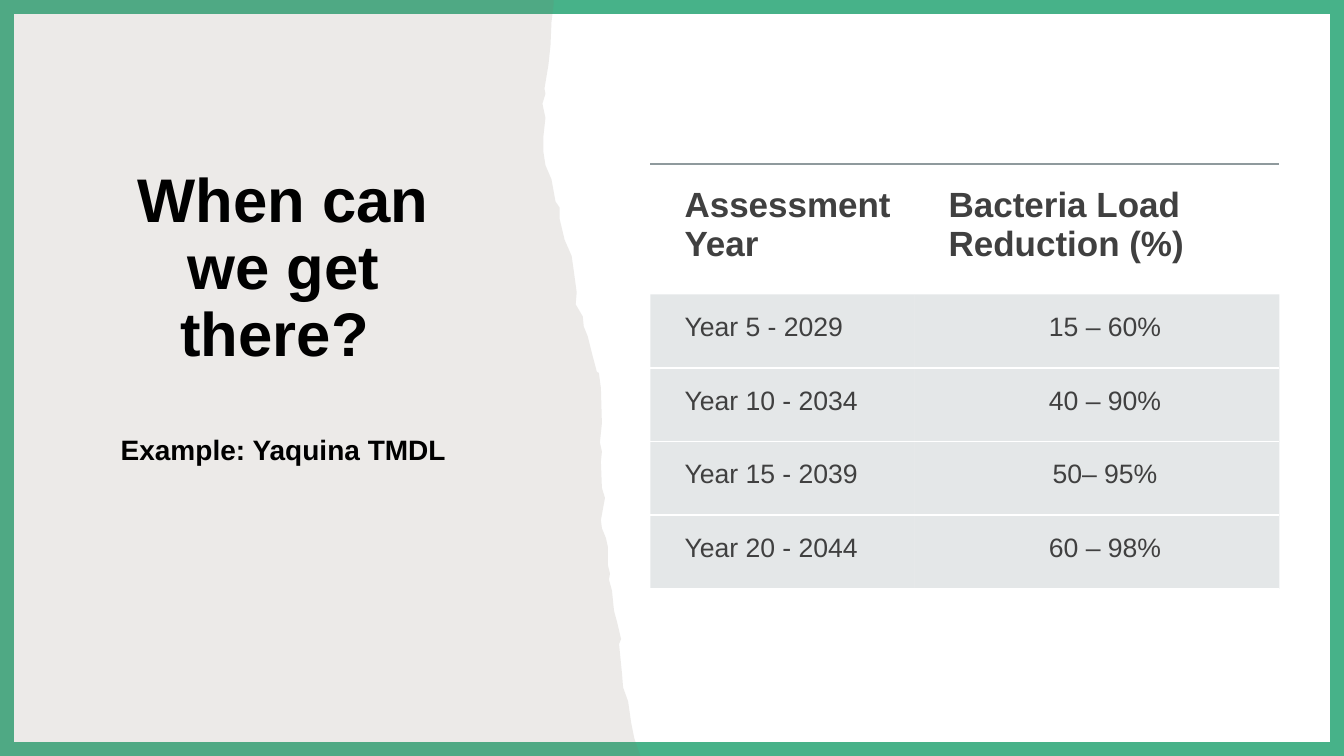
from lxml import etree
from pptx import Presentation
from pptx.dml.color import RGBColor
from pptx.enum.shapes import MSO_SHAPE
from pptx.enum.text import MSO_ANCHOR, PP_ALIGN
from pptx.oxml.ns import qn
from pptx.util import Inches, Pt

RECT = MSO_SHAPE.RECTANGLE
CENTER, LEFT = PP_ALIGN.CENTER, PP_ALIGN.LEFT
BOTTOM = MSO_ANCHOR.BOTTOM

# Content
TITLE = "When can we get there? "
SUBTITLE = "Example: Yaquina TMDL"
HEADER = ("Assessment Year", "Bacteria Load Reduction (%)")
FIRST_YEAR, YEAR_STEP = 2024, 5
REDUCTIONS = ("15 – 60%", "40 – 90%", "50– 95%", "60 – 98%")

# Torn edge of the left panel: (x, y) in inches, top to bottom
TORN_EDGE = [
    (5.49, 0), (5.49, 0.05), (5.47, 0.22), (5.46, 0.45), (5.44, 0.64), (5.4, 0.88),
    (5.41, 0.93), (5.38, 1.03), (5.41, 1.17), (5.39, 1.35), (5.39, 1.51), (5.41, 1.64),
    (5.47, 1.78), (5.51, 2), (5.55, 2.06), (5.55, 2.17), (5.6, 2.38), (5.67, 2.54),
    (5.69, 2.68), (5.72, 2.9), (5.71, 3.02), (5.78, 3.14), (5.79, 3.24), (5.83, 3.34),
    (5.87, 3.5), (5.92, 3.69), (5.94, 3.7), (5.96, 3.85), (5.97, 4.2), (5.95, 4.39),
    (5.97, 4.48), (5.96, 4.58), (5.97, 4.84), (6, 4.94), (5.96, 5.16), (5.97, 5.24),
    (6.01, 5.34), (6.03, 5.43), (6.03, 5.61), (6.05, 5.69), (6.04, 5.75), (6.07, 5.86),
    (6.09, 6.06), (6.12, 6.17), (6.16, 6.34), (6.14, 6.39), (6.17, 6.69), (6.18, 6.82),
    (6.23, 6.96), (6.26, 7.17), (6.29, 7.32), (6.35, 7.5),
]

# Colours
GREEN, PAPER, BLACK, TEXT_GREY = "47B289", "82766A", "000000", "404040"
RULE_GREY, ROW_GREY, WHITE = "8F9A9D", "B4BCBE", "FFFFFF"

# Layout in inches
SLIDE_W, SLIDE_H = 13.33, 7.5
TITLE_BOX = (0.83, 1.62, 3.96, 3.06)
TABLE_LEFT, TABLE_TOP = 6.45, 1.63
COL_WIDTHS = (2.62, 3.62)
HEADER_H, ROW_H = 1.29, 0.73
CELL_LEFT, HEADER_PAD, ROW_PAD = 0.34, 0.21, 0.18

# Text formats
TITLE_FORMAT = dict(size=44, color=BLACK, bold=True, align=CENTER, spacing=0.9)
SUBTITLE_FORMAT = dict(TITLE_FORMAT, size=20, before=48)
HEADER_FORMAT = dict(size=25, color=TEXT_GREY, bold=True)
YEAR_FORMAT = dict(size=19, color=TEXT_GREY)
REDUCTION_FORMAT = dict(YEAR_FORMAT, align=CENTER)

NO_TABLE_STYLE = "{2D5ABB26-0587-4C30-8999-92F81FD0307C}"


def rgb(value):
    return RGBColor.from_string(value)


def set_opacity(parent, percent):
    color = next(parent.iter(qn("a:srgbClr")))
    etree.SubElement(color, qn("a:alpha"), val=str(percent * 1000))


def add_text(p, text, size, color, bold=False, align=LEFT, spacing=1.0, before=0):
    p.alignment, p.line_spacing = align, spacing
    if before:
        p.space_before = Pt(before)
    r = p.add_run()
    r.text = text
    r.font.name, r.font.size, r.font.bold = "Arial", Pt(size), bold
    r.font.color.rgb = rgb(color)


def add_border(cell, side, color, opacity=100):
    ln = etree.SubElement(cell._tc.get_or_add_tcPr(), qn(side), w=str(Pt(1.5)))
    fill = etree.SubElement(ln, qn("a:solidFill"))
    etree.SubElement(fill, qn("a:srgbClr"), val=color)
    set_opacity(ln, opacity)


def fill_cell(cell, text, text_format, pad):
    cell.margin_left = Inches(CELL_LEFT)
    cell.margin_top = cell.margin_right = cell.margin_bottom = Inches(pad)
    add_text(cell.text_frame.paragraphs[0], text, **text_format)


def add_frame(s):
    sp = s.shapes.add_shape(RECT, 0, 0, Inches(SLIDE_W), Inches(SLIDE_H))
    sp.shadow.inherit = False
    sp.fill.background()
    sp.line.color.rgb = rgb(GREEN)
    sp.line.width = Pt(20)


def add_torn_panel(s):
    outline = [(Inches(x), Inches(y)) for x, y in TORN_EDGE + [(0, SLIDE_H)]]
    builder = s.shapes.build_freeform(0, 0)
    builder.add_line_segments(outline, close=True)
    sp = builder.convert_to_shape()
    sp.shadow.inherit = False
    sp.fill.solid()
    sp.fill.fore_color.rgb = rgb(PAPER)
    set_opacity(sp._element.spPr, 15)
    sp.line.fill.background()


def add_title(s):
    tf = s.shapes.add_textbox(*map(Inches, TITLE_BOX)).text_frame
    tf.word_wrap, tf.vertical_anchor = True, BOTTOM
    add_text(tf.paragraphs[0], TITLE, **TITLE_FORMAT)
    add_text(tf.add_paragraph(), SUBTITLE, **SUBTITLE_FORMAT)


def add_reduction_table(s):
    heights = [HEADER_H] + [ROW_H] * len(REDUCTIONS)
    table = s.shapes.add_table(
        len(heights), len(COL_WIDTHS), Inches(TABLE_LEFT), Inches(TABLE_TOP),
        Inches(sum(COL_WIDTHS)), Inches(sum(heights))).table
    table.first_row = table.horz_banding = False
    table._tbl.tblPr.find(qn("a:tableStyleId")).text = NO_TABLE_STYLE
    for col, width in zip(table.columns, COL_WIDTHS):
        col.width = Inches(width)
    for row, height in zip(table.rows, heights):
        row.height = Inches(height)

    # Header: a grey rule above, no fill
    for cell, text in zip(table.rows[0].cells, HEADER):
        add_border(cell, "a:lnT", RULE_GREY, opacity=60)
        cell.fill.background()
        fill_cell(cell, text, HEADER_FORMAT, HEADER_PAD)

    # One grey row for every assessment, parted by white rules
    for i, reduction in enumerate(REDUCTIONS, start=1):
        elapsed = i * YEAR_STEP
        year_cell, reduction_cell = table.rows[i].cells
        for cell in (year_cell, reduction_cell):
            add_border(cell, "a:lnB", WHITE)
            cell.fill.solid()
            cell.fill.fore_color.rgb = rgb(ROW_GREY)
            set_opacity(cell._tc.tcPr.find(qn("a:solidFill")), 35)
        fill_cell(year_cell, f"Year {elapsed} - {FIRST_YEAR + elapsed}", YEAR_FORMAT, ROW_PAD)
        fill_cell(reduction_cell, reduction, REDUCTION_FORMAT, ROW_PAD)


def main():
    prs = Presentation()
    prs.slide_width, prs.slide_height = Inches(SLIDE_W), Inches(SLIDE_H)
    s = prs.slides.add_slide(prs.slide_layouts[6])
    add_frame(s)
    add_torn_panel(s)
    add_title(s)
    add_reduction_table(s)
    prs.save("out.pptx")


if __name__ == "__main__":
    main()
